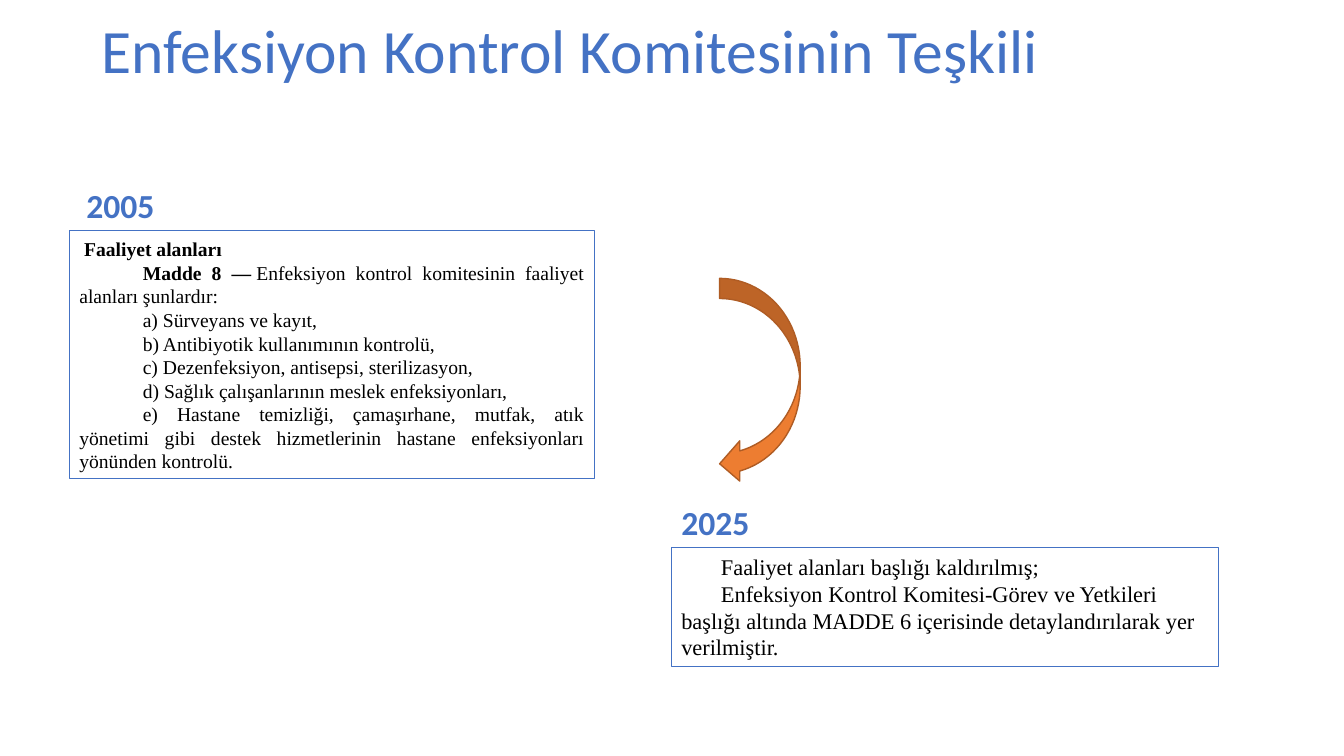
from pptx import Presentation
from pptx.dml.color import RGBColor
from pptx.enum.shapes import MSO_SHAPE
from pptx.enum.text import MSO_ANCHOR, PP_ALIGN
from pptx.util import Cm, Pt

RECTANGLE, CURVED_ARROW = MSO_SHAPE.RECTANGLE, MSO_SHAPE.CURVED_DOWN_ARROW
MIDDLE, BOTTOM = MSO_ANCHOR.MIDDLE, MSO_ANCHOR.BOTTOM
LEFT, JUSTIFY = PP_ALIGN.LEFT, PP_ALIGN.JUSTIFY

THEME = {
    "blue": RGBColor(0x44, 0x72, 0xC4),
    "orange": RGBColor(0xED, 0x7D, 0x31),
    "rust": RGBColor(0xAF, 0x5C, 0x24),
    "black": RGBColor(0, 0, 0),
    "heading_font": "Calibri",
    "body_font": "Times New Roman",
    "title_size": 44,
    "year_size": 24,
    "old_size": 14,
    "new_size": 16,
}

TITLE = "Enfeksiyon Kontrol Komitesinin Teşkili"
OLD_YEAR, NEW_YEAR = "2005", "2025"
OLD_HEADING = "Faaliyet alanları"
OLD_ARTICLE = ("Madde 8 —", "\u00a0Enfeksiyon kontrol komitesinin faaliyet alanları şunlardır:")
OLD_ITEMS = [
    "a) Sürveyans ve kayıt,",
    "b) Antibiyotik kullanımının kontrolü,",
    "c) Dezenfeksiyon, antisepsi, sterilizasyon,",
    "d) Sağlık çalışanlarının meslek enfeksiyonları,",
    "e) Hastane temizliği, çamaşırhane, mutfak, atık yönetimi gibi destek "
    "hizmetlerinin hastane enfeksiyonları yönünden kontrolü.",
]
NEW_TEXT = [
    "Faaliyet alanları başlığı kaldırılmış;",
    "Enfeksiyon Kontrol Komitesi-Görev ve Yetkileri başlığı altında MADDE 6 "
    "içerisinde detaylandırılarak yer verilmiştir.",
]

TITLE_BOX = (2.31, 0.3, 29.21, 2.08)
OLD_YEAR_BOX = (1.93, 3.53, 14.33, 2.29)
NEW_YEAR_BOX = (16.92, 11.51, 14.4, 2.29)
OLD_BOX = (1.75, 5.82, 13.23, 6.25)
NEW_BOX = (16.92, 13.79, 13.79, 3)
ARROW_BOX = (16.56, 8.59, 5.18, 2.03)
OLD_INDENT, OLD_HEADING_INDENT, NEW_INDENT = 1.6, 0.12, 1

presentation = Presentation()
presentation.slide_width, presentation.slide_height = Cm(33.87), Cm(19.05)
slide = presentation.slides.add_slide(presentation.slide_layouts[6])


def lengths(box):
    return [Cm(value) for value in box]


def add_run(paragraph, text, font, size, color, bold=False):
    run = paragraph.add_run()
    run.text = text
    run.font.name, run.font.size, run.font.bold = font, Pt(size), bold
    run.font.color.rgb = color


def add_heading(text, box, size, anchor, bold):
    heading = slide.shapes.add_textbox(*lengths(box)).text_frame
    heading.word_wrap, heading.vertical_anchor = True, anchor
    line = heading.paragraphs[0]
    line.line_spacing = 0.9
    add_run(line, text, THEME["heading_font"], size, THEME["blue"], bold)


def add_article(paragraphs, box, size, align):
    frame = slide.shapes.add_shape(RECTANGLE, *lengths(box))
    frame.shadow.inherit = False
    frame.fill.background()
    frame.line.color.rgb, frame.line.width = THEME["blue"], Pt(0.75)
    article = frame.text_frame
    article.word_wrap, article.vertical_anchor = True, MIDDLE
    for position, (indent, runs) in enumerate(paragraphs):
        paragraph = article.add_paragraph() if position else article.paragraphs[0]
        paragraph.alignment = align
        properties = paragraph._p.get_or_add_pPr()
        properties.set("marL", "0")
        properties.set("indent", str(Cm(indent)))
        for text, bold in runs:
            add_run(paragraph, text, THEME["body_font"], size, THEME["black"], bold)


old_paragraphs = [
    (OLD_HEADING_INDENT, [(OLD_HEADING, True)]),
    (OLD_INDENT, [(OLD_ARTICLE[0], True), (OLD_ARTICLE[1], False)]),
    *[(OLD_INDENT, [(item, False)]) for item in OLD_ITEMS],
]
new_paragraphs = [(NEW_INDENT, [(sentence, False)]) for sentence in NEW_TEXT]

add_heading(TITLE, TITLE_BOX, THEME["title_size"], MIDDLE, False)
add_heading(OLD_YEAR, OLD_YEAR_BOX, THEME["year_size"], BOTTOM, True)
add_heading(NEW_YEAR, NEW_YEAR_BOX, THEME["year_size"], BOTTOM, True)
add_article(new_paragraphs, NEW_BOX, THEME["new_size"], LEFT)

arrow = slide.shapes.add_shape(CURVED_ARROW, *lengths(ARROW_BOX))
arrow.rotation = 90
arrow.shadow.inherit = False
arrow.fill.solid()
arrow.fill.fore_color.rgb = THEME["orange"]
arrow.line.color.rgb, arrow.line.width = THEME["rust"], Pt(1)

add_article(old_paragraphs, OLD_BOX, THEME["old_size"], JUSTIFY)

presentation.save("out.pptx")
